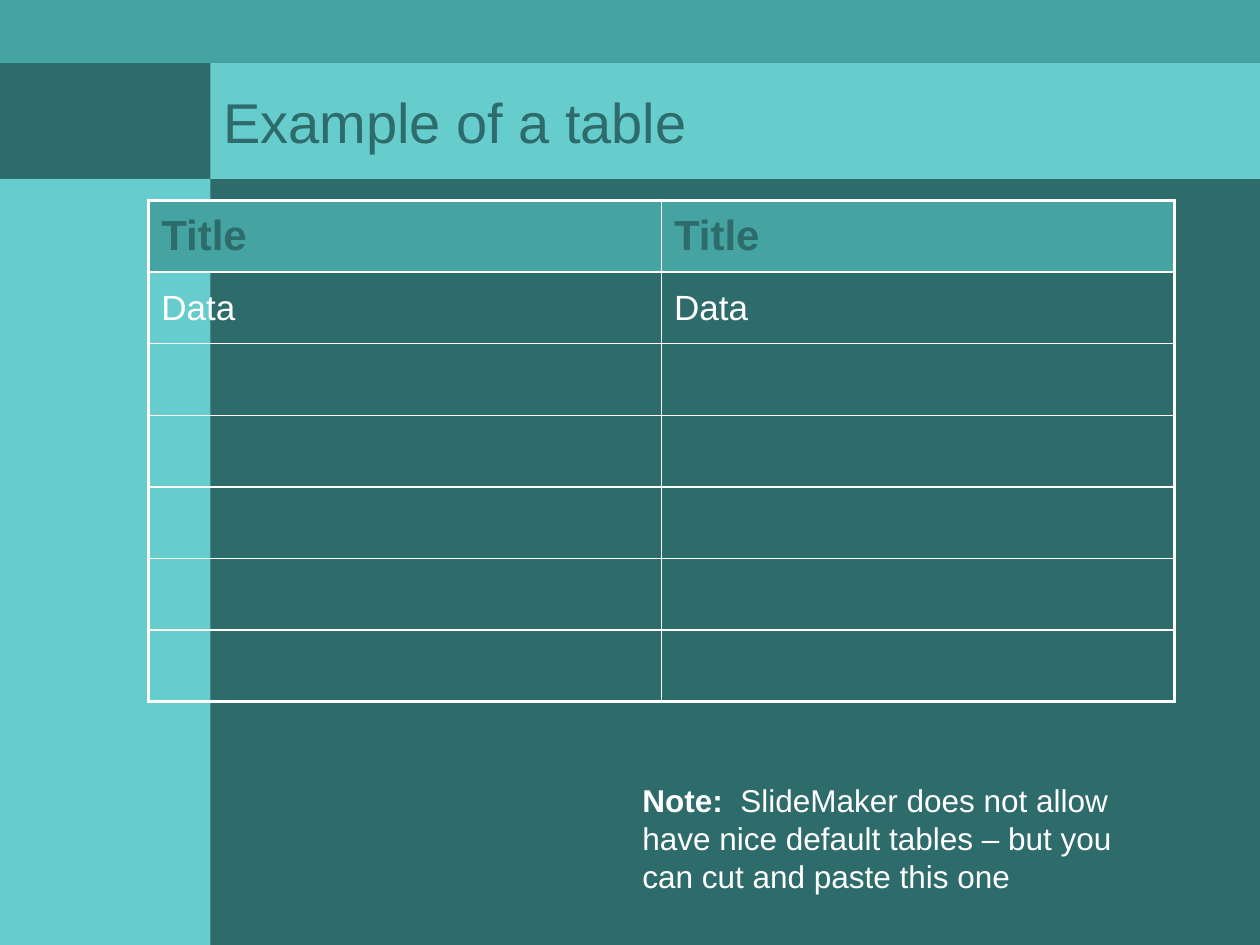
from lxml import etree
from pptx import Presentation, util as u
from pptx.dml.color import RGBColor
from pptx.enum import shapes, text
from pptx.oxml import ns

HUES = {"dark": "2E6B6B", "mid": "45A3A1", "light": "66CCCC", "white": "FFFFFF"}
HEAD = {"name": "Arial", "size": u.Pt(32), "bold": False}
LABEL = {"name": "Arial", "size": u.Pt(24), "bold": True}
DATA = {"name": "Arial", "size": u.Pt(20), "bold": False}
STRONG = {"name": "Arial", "size": u.Pt(18), "bold": True}
PLAIN = {**STRONG, "bold": False}
ROWS = [["Title", "Title"], ["Data", "Data"]] + [["", ""]] * 5
THICK, THIN = 2.25, 1


def paint(fill, hue):
    """Fill with a solid named hue."""
    fill.solid()
    fill.fore_color.rgb = RGBColor.from_string(HUES[hue])


def write(para, words, form, hue):
    """Add one formatted run to a paragraph."""
    run = para.add_run()
    run.text = words
    for key, value in form.items():
        setattr(run.font, key, value)
    run.font.color.rgb = RGBColor.from_string(HUES[hue])


def add_band(slide, box, hue):
    """Draw a plain rectangle in the box."""
    band = slide.shapes.add_shape(shapes.MSO_SHAPE.RECTANGLE, *map(u.Inches, box))
    band.shadow.inherit = False
    paint(band.fill, hue)
    band.line.fill.background()


def add_title(slide, box, words):
    """Place the title placeholder in the box."""
    title = slide.shapes.title
    for key, value in zip(("left", "top", "width", "height"), box):
        setattr(title, key, u.Inches(value))
    paint(title.fill, "light")
    frame = title.text_frame
    frame.vertical_anchor = text.MSO_ANCHOR.MIDDLE
    para = frame.paragraphs[0]
    para.alignment = text.PP_ALIGN.LEFT
    write(para, words, HEAD, "dark")


def add_edge(cell, side, width):
    """Draw a white border on one side of a cell."""
    line = etree.SubElement(cell._tc.get_or_add_tcPr(), ns.qn("a:ln" + side),
                            w=str(u.Pt(width)))
    fill = etree.SubElement(line, ns.qn("a:solidFill"))
    etree.SubElement(fill, ns.qn("a:srgbClr"), val=HUES["white"])


def add_grid(slide, box, rows):
    """Place the table with a thick outer frame in the box."""
    last, end = len(rows) - 1, len(rows[0]) - 1
    table = slide.shapes.add_table(last + 1, end + 1, *map(u.Inches, box)).table
    table.first_row = table.horz_banding = False
    for r, row in enumerate(rows):
        for c, words in enumerate(row):
            cell = table.cell(r, c)
            cell.vertical_anchor = text.MSO_ANCHOR.MIDDLE
            outer = {"L": c == 0, "R": c == end, "T": r == 0, "B": r == last}
            for side, edge in outer.items():
                add_edge(cell, side, THICK if edge else THIN)
            if r == 0:
                paint(cell.fill, "mid")
            else:
                cell.fill.background()
            if words:
                form, hue = (DATA, "white") if r else (LABEL, "dark")
                write(cell.text_frame.paragraphs[0], words, form, hue)


def add_note(slide, box, lead, words):
    """Place a note with a bold lead in the box."""
    frame = slide.shapes.add_textbox(*map(u.Inches, box)).text_frame
    frame.word_wrap = True
    frame.auto_size = text.MSO_AUTO_SIZE.SHAPE_TO_FIT_TEXT
    para = frame.paragraphs[0]
    write(para, lead, STRONG, "white")
    write(para, words, PLAIN, "white")


def main():
    """Build the slide and save it."""
    deck = Presentation()
    deck.slide_width, deck.slide_height = u.Inches(10), u.Inches(7.5)
    slide = deck.slides.add_slide(deck.slide_layouts[5])
    paint(slide.background.fill, "dark")
    add_band(slide, (0, 0, 10, 0.5), "mid")
    add_band(slide, (0, 1.42, 1.67, 6.08), "light")
    add_title(slide, (1.67, 0.5, 8.33, 0.92), "Example of a table")
    add_grid(slide, (1.18, 1.59, 8.14, 3.98), ROWS)
    add_note(slide, (5, 6.15, 4.21, 1), "Note:  ",
             "SlideMaker does not allow have nice default tables – "
             "but you can cut and paste this one")
    deck.save("out.pptx")


if __name__ == "__main__":
    main()
